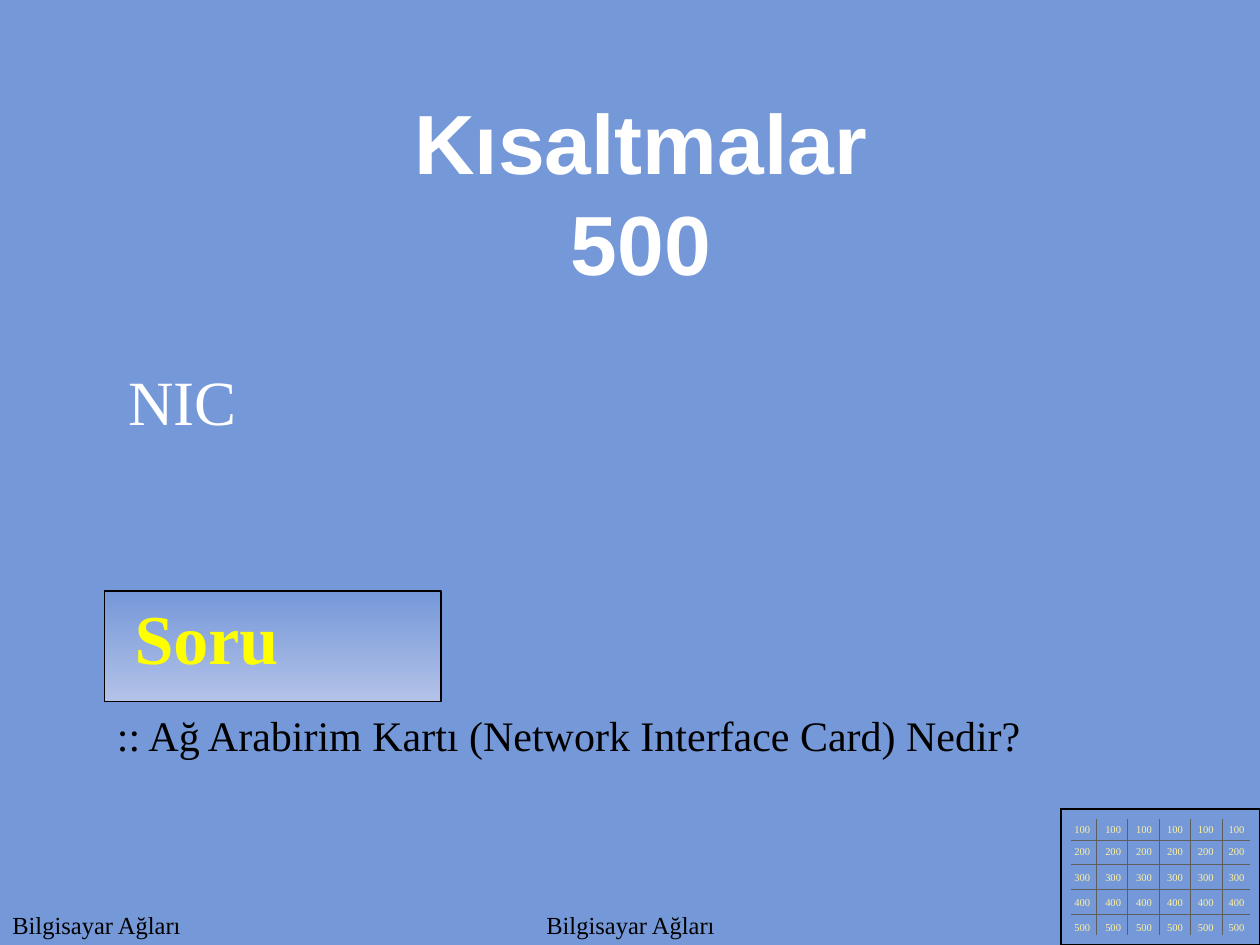
from lxml.etree import SubElement
from pptx import Presentation
from pptx.dml.color import RGBColor
from pptx.enum.shapes import MSO_CONNECTOR, MSO_SHAPE
from pptx.enum.text import MSO_AUTO_SIZE, PP_ALIGN
from pptx.oxml.ns import qn
from pptx.util import Inches, Pt

rgb = RGBColor.from_string


def add_text(shapes, text, x, y, w, h, size, color, font="Times New Roman", bold=False,
             center=False, grow=True, before=None, hanging=None, inset=None):
    tb = shapes.add_textbox(Inches(x), Inches(y), Inches(w), Inches(h))
    tf = tb.text_frame
    tf.word_wrap = True
    tf.auto_size = MSO_AUTO_SIZE.SHAPE_TO_FIT_TEXT if grow else MSO_AUTO_SIZE.NONE
    if inset is not None:
        tf.margin_left = tf.margin_right = tf.margin_top = tf.margin_bottom = Inches(inset)
    p = tf.paragraphs[0]
    p.text = text
    p.alignment = PP_ALIGN.CENTER if center else PP_ALIGN.LEFT
    pPr = p._p.get_or_add_pPr()
    if before:
        spacing = SubElement(pPr, qn("a:spcBef"))
        SubElement(spacing, qn("a:spcPct")).set("val", str(before * 1000))
    if hanging:
        pPr.set("marL", str(Inches(hanging)))
        pPr.set("indent", str(-Inches(hanging)))
    for r in p.runs:
        r.font.name = font
        r.font.size = Pt(size)
        r.font.bold = bold
        r.font.color.rgb = rgb(color)


def add_box(shapes, kind, x, y, w, h):
    sp = shapes.add_shape(kind, Inches(x), Inches(y), Inches(w), Inches(h))
    sp.shadow.inherit = False
    sp.line.color.rgb = rgb("000000")
    sp.line.width = Pt(0.75)
    return sp


prs = Presentation()
prs.slide_width = Inches(10)
prs.slide_height = Inches(7.5)
s = prs.slides.add_slide(prs.slide_layouts[6])
s.background.fill.solid()
s.background.fill.fore_color.rgb = rgb("7598D9")

add_text(s.shapes, "Bilgisayar Ağları", 0, 7.17, 10, 0.33, 14, "000000", grow=False)

button = s.shapes.add_group_shape().shapes
sp = add_box(button, MSO_SHAPE.ACTION_BUTTON_CUSTOM, 0.83, 4.69, 2.67, 0.88)
sp.fill.gradient()
sp.fill.gradient_angle = 270
for stop, color in zip(sp.fill.gradient_stops, ("7598D9", "B3C2E7")):
    stop.color.rgb = rgb(color)
add_text(button, "Soru", 0.97, 4.67, 2.53, 0.77, 40, "FFFF00", bold=True, before=50)

board = s.shapes.add_group_shape().shapes
sp = add_box(board, MSO_SHAPE.ACTION_BUTTON_CUSTOM, 8.42, 6.42, 1.58, 1.08)
sp.fill.solid()
sp.fill.fore_color.rgb = rgb("7598D9")

grid = [(8.7 + 0.25 * i, 6.5, 8.7 + 0.25 * i, 7.42) for i in range(5)]
grid += [(8.5, y, 9.92, y) for y in (6.67, 6.86, 7.06, 7.26)]
for x1, y1, x2, y2 in grid:
    ln = board.add_connector(MSO_CONNECTOR.STRAIGHT, Inches(x1), Inches(y1), Inches(x2), Inches(y2))
    ln.line.color.rgb = rgb("5F5F5F")
    ln.line.width = Pt(0.75)
    SubElement(ln._element.spPr, qn("a:effectLst"))

for row, y in enumerate((6.53, 6.71, 6.91, 7.11, 7.31), 1):
    for col in range(6):
        add_text(board, str(row * 100), 8.52 + 0.245 * col, y, 0.14, 0.1, 6, "FFF39D",
                 center=True, inset=0)

add_text(s.shapes, "Bilgisayar Ağları", 1.67, 7.17, 6.67, 0.33, 14, "000000",
         center=True, grow=False)
add_text(s.shapes, ":: Ağ Arabirim Kartı (Network Interface Card) Nedir?", 0.83, 5.58, 8.25, 0.5,
         24, "000000", before=50, hanging=0.42)
add_text(s.shapes, "NIC", 0.92, 2.83, 8.33, 0.7, 36, "FFFFFF", before=50)
add_text(s.shapes, "Kısaltmalar\v500", 0.92, 0.67, 8.33, 1.7, 48, "FFFFFF", font="Arial",
         bold=True, center=True, before=50)
add_box(s.shapes, MSO_SHAPE.RECTANGLE, 8.42, 6.42, 1.58, 1.08).fill.background()

prs.save("out.pptx")
